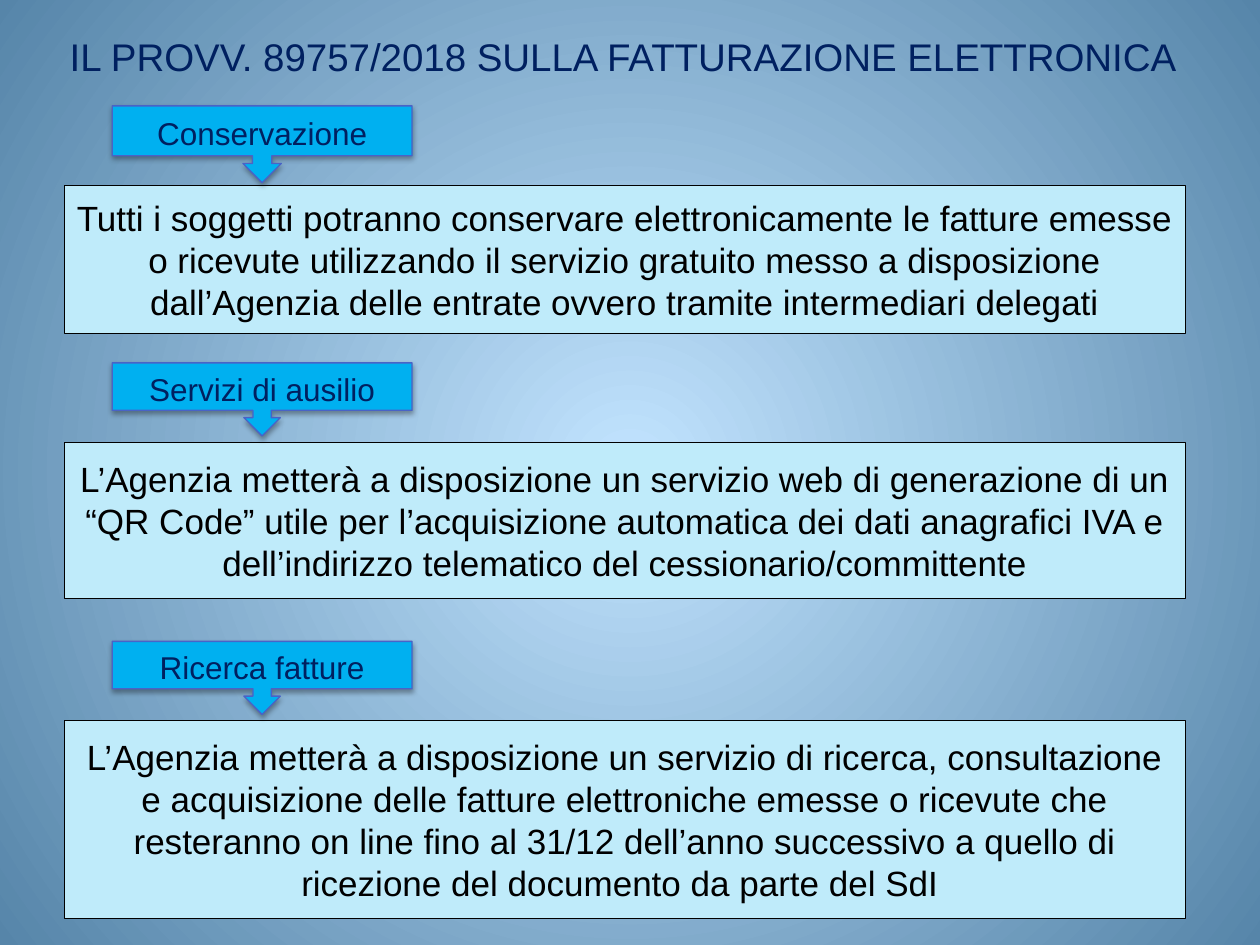
from dataclasses import dataclass

from lxml import etree
from pptx import Presentation
from pptx.dml.color import RGBColor
from pptx.enum.shapes import MSO_SHAPE
from pptx.enum.text import MSO_ANCHOR, PP_ALIGN
from pptx.oxml import parse_xml
from pptx.oxml.ns import nsdecls, qn
from pptx.util import Inches, Pt

RECT = MSO_SHAPE.RECTANGLE
CALLOUT = MSO_SHAPE.DOWN_ARROW_CALLOUT
MIDDLE = MSO_ANCHOR.MIDDLE
CENTER = PP_ALIGN.CENTER


@dataclass(frozen=True)
class Theme:
    font: str = "Arial"
    navy: str = "002060"
    black: str = "000000"
    label_fill: str = "00B0F0"
    label_line: str = "4963C7"
    body_fill: str = "BFEBFA"
    bg_center: str = "C2E4FF"
    bg_edge: str = "5685A9"
    title_size: int = 22
    label_size: int = 18
    body_size: int = 20
    leading: int = 24
    line_width: float = 0.75


THEME = Theme()

TITLE = "IL PROVV. 89757/2018 SULLA FATTURAZIONE ELETTRONICA "
LEFT, WIDTH = 0.51, 8.9
LABEL_INDENT, LABEL_WIDTH = 0.38, 2.38

# Label, label top and height, body top and height, body text
SECTIONS = [
    ("Conservazione", 0.84, 0.61, 1.47, 1.18,
     "Tutti i soggetti potranno conservare elettronicamente le fatture emesse "
     "o ricevute utilizzando il servizio gratuito messo a disposizione "
     "dall’Agenzia delle entrate ovvero tramite intermediari delegati"),
    ("Servizi di ausilio", 2.88, 0.58, 3.51, 1.24,
     "L’Agenzia metterà a disposizione un servizio web di generazione di un "
     "“QR Code” utile per l’acquisizione automatica dei dati anagrafici IVA e "
     "dell’indirizzo telematico del cessionario/committente"),
    ("Ricerca fatture", 5.09, 0.58, 5.72, 1.57,
     "L’Agenzia metterà a disposizione un servizio di ricerca, consultazione e "
     "acquisizione delle fatture elettroniche emesse o ricevute che resteranno "
     "on line fino al 31/12 dell’anno successivo a quello di ricezione del "
     "documento da parte del SdI "),
]


def rgb(value):
    return RGBColor.from_string(value)


def set_text(sp, text, size, color):
    tf = sp.text_frame
    tf.word_wrap = True
    tf.vertical_anchor = MIDDLE
    p = tf.paragraphs[0]
    p.text = text
    p.alignment = CENTER
    p.font.name = THEME.font
    p.font.size = Pt(size)
    p.font.color.rgb = rgb(color)
    return p


def add_box(slide, kind, box, fill, line, text, size, color):
    sp = slide.shapes.add_shape(kind, *map(Inches, box))
    sp.fill.solid()
    sp.fill.fore_color.rgb = rgb(fill)
    sp.line.color.rgb = rgb(line)
    sp.line.width = Pt(THEME.line_width)
    sp.shadow.inherit = False
    set_text(sp, text, size, color).line_spacing = Pt(THEME.leading)
    return sp


def add_shadow(sp):
    effects = sp._element.spPr.find(qn("a:effectLst"))
    effects.append(parse_xml(
        f'<a:outerShdw {nsdecls("a")} blurRad="{Pt(3.1)}" dist="{Pt(1.8)}" '
        'dir="5400000" rotWithShape="0">'
        f'<a:srgbClr val="{THEME.black}"><a:alpha val="35000"/></a:srgbClr>'
        '</a:outerShdw>'))


def paint_background(slide):
    fill = slide.background.fill
    fill.gradient()
    for stop, color, pos in zip(fill.gradient_stops,
                                (THEME.bg_center, THEME.bg_edge), (0, 1)):
        stop.color.rgb = rgb(color)
        stop.position = pos
    # Turn the linear gradient into a radial one around the centre
    grad = slide.background._cSld.find(".//" + qn("a:gradFill"))
    grad.remove(grad.find(qn("a:lin")))
    path = etree.SubElement(grad, qn("a:path"), path="circle")
    etree.SubElement(path, qn("a:fillToRect"),
                     {side: "50000" for side in "ltrb"})


def add_title(slide, box):
    sp = slide.shapes.add_textbox(*map(Inches, box))
    p = set_text(sp, TITLE, THEME.title_size, THEME.navy)
    p.space_before = Pt(0.2 * THEME.title_size)


def add_section(slide, label, label_box, text, body_box):
    add_box(slide, RECT, body_box, THEME.body_fill, THEME.black,
            text, THEME.body_size, THEME.black)
    add_shadow(add_box(slide, CALLOUT, label_box, THEME.label_fill,
                       THEME.label_line, label, THEME.label_size, THEME.navy))


def main():
    prs = Presentation()
    prs.slide_width, prs.slide_height = Inches(10), Inches(7.5)
    slide = prs.slides.add_slide(prs.slide_layouts[6])
    paint_background(slide)
    add_title(slide, (0.12, 0.21, 9.72, 0.47))
    for label, label_top, label_h, body_top, body_h, text in SECTIONS:
        add_section(slide, label,
                    (LEFT + LABEL_INDENT, label_top, LABEL_WIDTH, label_h),
                    text, (LEFT, body_top, WIDTH, body_h))
    prs.save("out.pptx")


if __name__ == "__main__":
    main()
